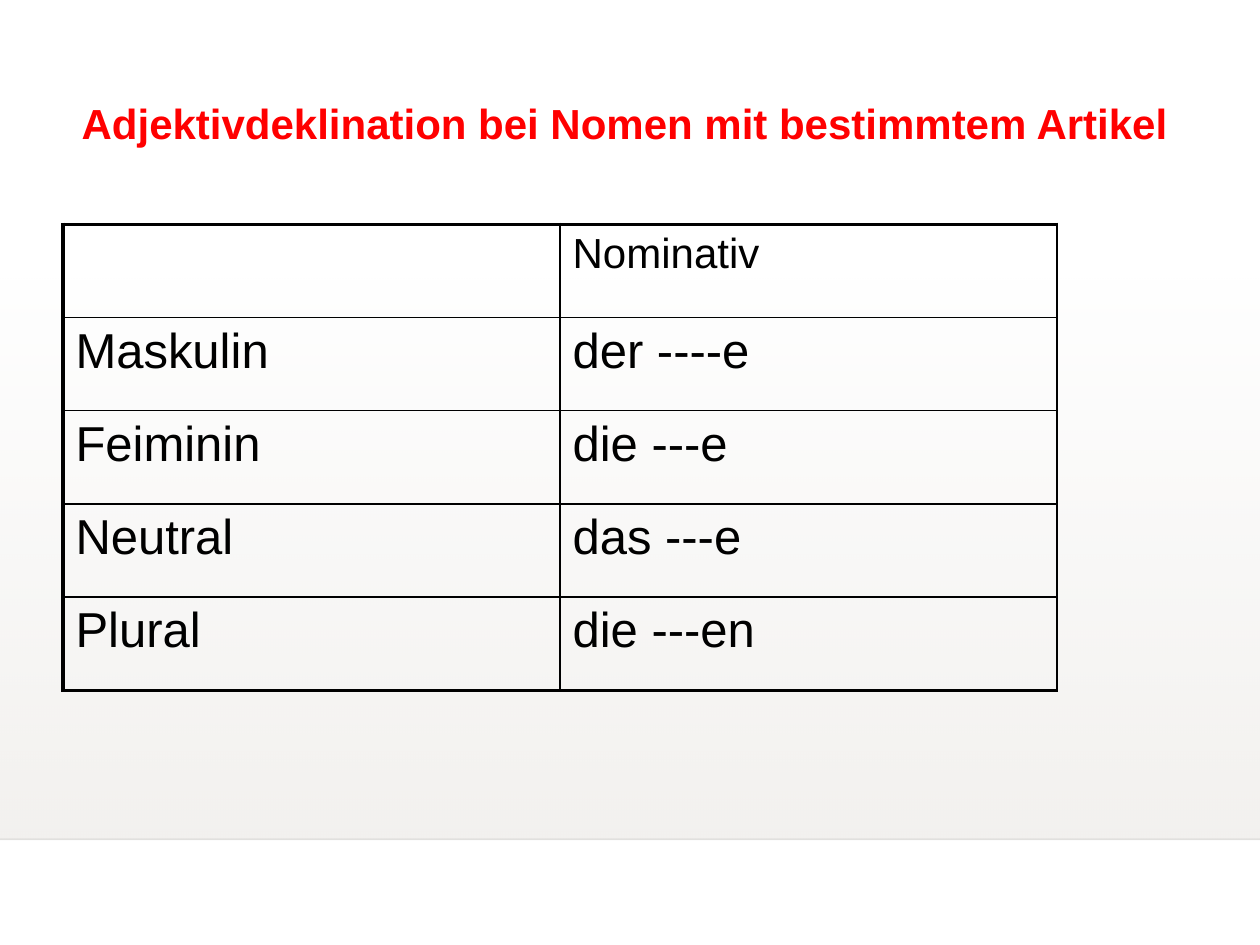
from lxml import etree
from pptx import Presentation
from pptx.dml.color import RGBColor
from pptx.enum.shapes import MSO_CONNECTOR, MSO_SHAPE
from pptx.enum.text import MSO_ANCHOR, PP_ALIGN
from pptx.oxml.ns import qn
from pptx.util import Inches, Pt

RECTANGLE = MSO_SHAPE.RECTANGLE
STRAIGHT = MSO_CONNECTOR.STRAIGHT
TOP = MSO_ANCHOR.TOP
LEFT = PP_ALIGN.LEFT

WIDTH, HEIGHT = 10, 7.5
FONT = "Arial"
TITLE = "Adjektivdeklination bei Nomen mit bestimmtem Artikel"
ROWS = [
    ("", "Nominativ"),
    ("Maskulin", "der ----e"),
    ("Feiminin", "die ---e"),
    ("Neutral", "das ---e"),
    ("Plural", "die ---en"),
]
THIN, THICK = 1, 2.25


def color(value):
    return RGBColor.from_string(value)


def set_opacity(parent, percent):
    for node in parent.iter(qn("a:srgbClr")):
        etree.SubElement(node, qn("a:alpha"), val=str(percent * 1000))


def write(para, text, **formats):
    para.alignment = LEFT
    span = para.add_run()
    span.text = text
    span.font.color.rgb = color(formats.pop("ink"))
    for name, value in {"name": FONT, **formats}.items():
        setattr(span.font, name, value)


def add_panel(page, box):
    panel = page.shapes.add_shape(RECTANGLE, *map(Inches, box))
    panel.shadow.inherit = False
    panel.line.fill.background()
    return panel


def add_backdrop(page, box):
    left, top, width, height = box
    floor = top + height
    shade = add_panel(page, box)
    shade.fill.gradient()
    shade.fill.gradient_angle = 270
    for stop, position, percent in zip(shade.fill.gradient_stops, (0, 1), (0, 100)):
        stop.position = position
        stop.color.rgb = color("DFDBD5")
        set_opacity(stop.color._xFill if hasattr(stop.color, "_xFill") else stop._gs, percent)

    edge = page.shapes.add_connector(
        STRAIGHT, *map(Inches, (left, floor, left + width, floor))
    )
    edge.line.width = Pt(1)
    edge.line.color.rgb = color("000001")
    properties = edge._element.spPr
    set_opacity(properties, 20)
    etree.SubElement(properties, qn("a:effectLst"))

    veil_top = 1.34
    veil = add_panel(page, (left, veil_top, width, HEIGHT - veil_top))
    veil.fill.solid()
    veil.fill.fore_color.rgb = color("FFFFFF")
    set_opacity(veil._element.spPr, 62)


def add_title(page, box):
    frame = page.shapes.add_textbox(*map(Inches, box)).text_frame
    formats = {"word_wrap": False, "vertical_anchor": TOP, "margin_top": Inches(0.09)}
    for name, value in formats.items():
        setattr(frame, name, value)
    write(frame.paragraphs[0], TITLE, size=Pt(24), bold=True, ink="FF0000")


def set_borders(cell, widths):
    properties = cell._tc.get_or_add_tcPr()
    for index, (side, width) in enumerate(widths.items()):
        border = etree.Element(qn(f"a:ln{side}"), w=str(Pt(width)))
        fill = etree.SubElement(border, qn("a:solidFill"))
        etree.SubElement(fill, qn("a:srgbClr"), val="000000")
        properties.insert(index, border)


def add_declension_table(page, box):
    row_count, column_count = len(ROWS), len(ROWS[0])
    table = page.shapes.add_table(row_count, column_count, *map(Inches, box)).table
    table.first_row = table.horz_banding = False
    for row, texts in enumerate(ROWS):
        for column, text in enumerate(texts):
            cell = table.cell(row, column)
            cell.fill.background()
            if text:
                size = Pt(28 if row else 24)
                write(cell.text_frame.paragraphs[0], text, size=size, ink="000000")
            set_borders(cell, {
                "L": THIN if column else THICK,
                "R": THIN,
                "T": THIN if row else THICK,
                "B": THICK if row == row_count - 1 else THIN,
            })


def main():
    deck = Presentation()
    deck.slide_width, deck.slide_height = Inches(WIDTH), Inches(HEIGHT)
    page = deck.slides.add_slide(deck.slide_layouts[6])
    page.background.fill.solid()
    page.background.fill.fore_color.rgb = color("FFFFFF")
    add_backdrop(page, (0, 2.2, WIDTH, 4.46))
    add_title(page, (0.55, 0.68, 8.9, 0.91))
    add_declension_table(page, (0.5, 1.78, 7.89, 3.7))
    deck.save("out.pptx")


if __name__ == "__main__":
    main()
